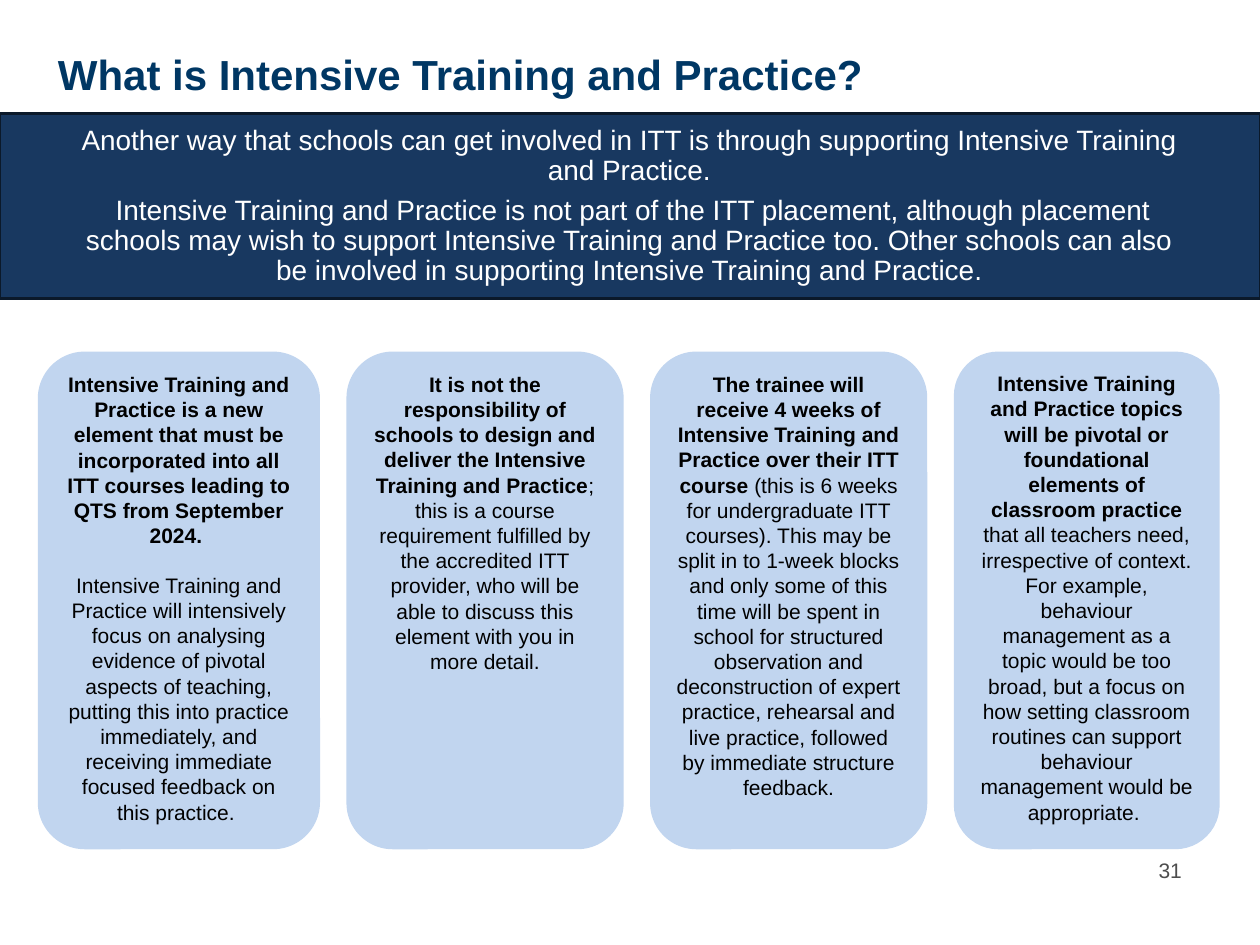
from pptx import Presentation
from pptx.dml.color import RGBColor
from pptx.enum.shapes import MSO_SHAPE
from pptx.enum.text import MSO_ANCHOR, PP_ALIGN
from pptx.util import Inches, Pt

COLORS = {
    "title": "003764",
    "band": "183860",
    "band_line": "0B192A",
    "card": "C1D5EF",
    "white": "FFFFFF",
    "black": "000000",
    "number": "4D4D4D",
}

INTRODUCTION = [
    "Another way that schools can get involved in ITT is through supporting "
    "Intensive Training and Practice.",
    " Intensive Training and Practice is not part of the ITT placement, although "
    "placement schools may wish to support Intensive Training and Practice too. "
    "Other schools can also be involved in supporting Intensive Training and Practice.",
]

# Each card: width, space between paragraphs, paragraphs of (text, bold) runs
CARDS = [
    (2.24, 14, [
        [("Intensive Training and Practice is a new element that must be incorporated "
          "into all ITT courses leading to QTS from September 2024. ", True)],
        [("Intensive Training and Practice will intensively focus on analysing evidence "
          "of pivotal aspects of teaching, putting this into practice immediately, and "
          "receiving immediate focused feedback on this practice. ", False)],
    ]),
    (2.2, 0, [
        [("It is not the responsibility of schools to design and deliver the Intensive "
          "Training and Practice", True),
         ("; this is a course requirement fulfilled by the accredited ITT provider, who "
          "will be able to discuss this element with you in more detail.", False)],
    ]),
    (2.2, 0, [
        [("The trainee will receive 4 weeks of Intensive Training and Practice over "
          "their ITT course ", True),
         ("(this is 6 weeks for undergraduate ITT courses). This may be split in to "
          "1-week blocks and only some of this time will be spent in school for "
          "structured observation and deconstruction of expert practice, rehearsal and "
          "live practice, followed by immediate structure feedback.", False)],
    ]),
    (2.11, 0, [
        [("Intensive Training and Practice topics will be pivotal or foundational "
          "elements of classroom practice ", True),
         ("that all teachers need, irrespective of context. ", False)],
        [("For example, behaviour management as a topic would be too broad, but a focus "
          "on how setting classroom routines can support behaviour management would be "
          "appropriate. ", False)],
    ]),
]
CARD_LEFT, CARD_TOP, CARD_HEIGHT, CARD_GAP = 0.3, 2.79, 3.95, 0.21


def rgb(name):
    return RGBColor.from_string(COLORS[name])


def format_run(run, size, color, bold=False):
    run.font.name = "Arial"
    run.font.size = Pt(size)
    run.font.bold = bold
    run.font.color.rgb = rgb(color)


def add_text(slide, box, lines, size, color, bold=False,
             align=PP_ALIGN.LEFT, inset=True, space_after=0):
    shape = slide.shapes.add_textbox(*map(Inches, box))
    frame = shape.text_frame
    frame.word_wrap = True
    if not inset:
        frame.margin_left = frame.margin_right = 0
        frame.margin_top = frame.margin_bottom = 0
    frame.text = "\n".join(lines)
    for paragraph in frame.paragraphs:
        paragraph.alignment = align
        paragraph.line_spacing = 0.9
        paragraph.space_after = Pt(space_after)
        for run in paragraph.runs:
            format_run(run, size, color, bold)


def add_panel(slide, kind, box, fill, line=None):
    shape = slide.shapes.add_shape(kind, *map(Inches, box))
    shape.shadow.inherit = False
    shape.fill.solid()
    shape.fill.fore_color.rgb = rgb(fill)
    if line:
        shape.line.color.rgb = rgb(line)
        shape.line.width = Pt(1.5)
    else:
        shape.line.fill.background()
    return shape


def add_card(slide, left, width, gap, paragraphs):
    box = (left, CARD_TOP, width, CARD_HEIGHT)
    frame = add_panel(slide, MSO_SHAPE.ROUNDED_RECTANGLE, box, "card").text_frame
    frame.word_wrap = True
    frame.vertical_anchor = MSO_ANCHOR.TOP
    for index, runs in enumerate(paragraphs):
        paragraph = frame.add_paragraph() if index else frame.paragraphs[0]
        paragraph.alignment = PP_ALIGN.CENTER
        if index:
            paragraph.space_before = Pt(gap)
        for text, bold in runs:
            run = paragraph.add_run()
            run.text = text
            format_run(run, 12, "black", bold)


def main():
    presentation = Presentation()
    presentation.slide_width = Inches(10)
    presentation.slide_height = Inches(7.5)
    slide = presentation.slides.add_slide(presentation.slide_layouts[6])

    # Title and introduction band
    add_panel(slide, MSO_SHAPE.RECTANGLE, (0, 0.9, 10, 1.47), "band", "band_line")
    add_text(slide, (0.46, 0.43, 8.75, 0.56), ["What is Intensive Training and Practice?"],
             24, "title", bold=True, inset=False)
    add_text(slide, (0.48, 0.95, 9.03, 1.74), INTRODUCTION, 16, "white",
             align=PP_ALIGN.CENTER, space_after=5.6)

    # Row of cards
    left = CARD_LEFT
    for width, gap, paragraphs in CARDS:
        add_card(slide, left, width, gap, paragraphs)
        left += width + CARD_GAP

    # Page number
    add_text(slide, (8.76, 6.83, 0.62, 0.2), ["31"], 12, "number",
             align=PP_ALIGN.RIGHT, inset=False)

    presentation.save("out.pptx")


if __name__ == "__main__":
    main()
